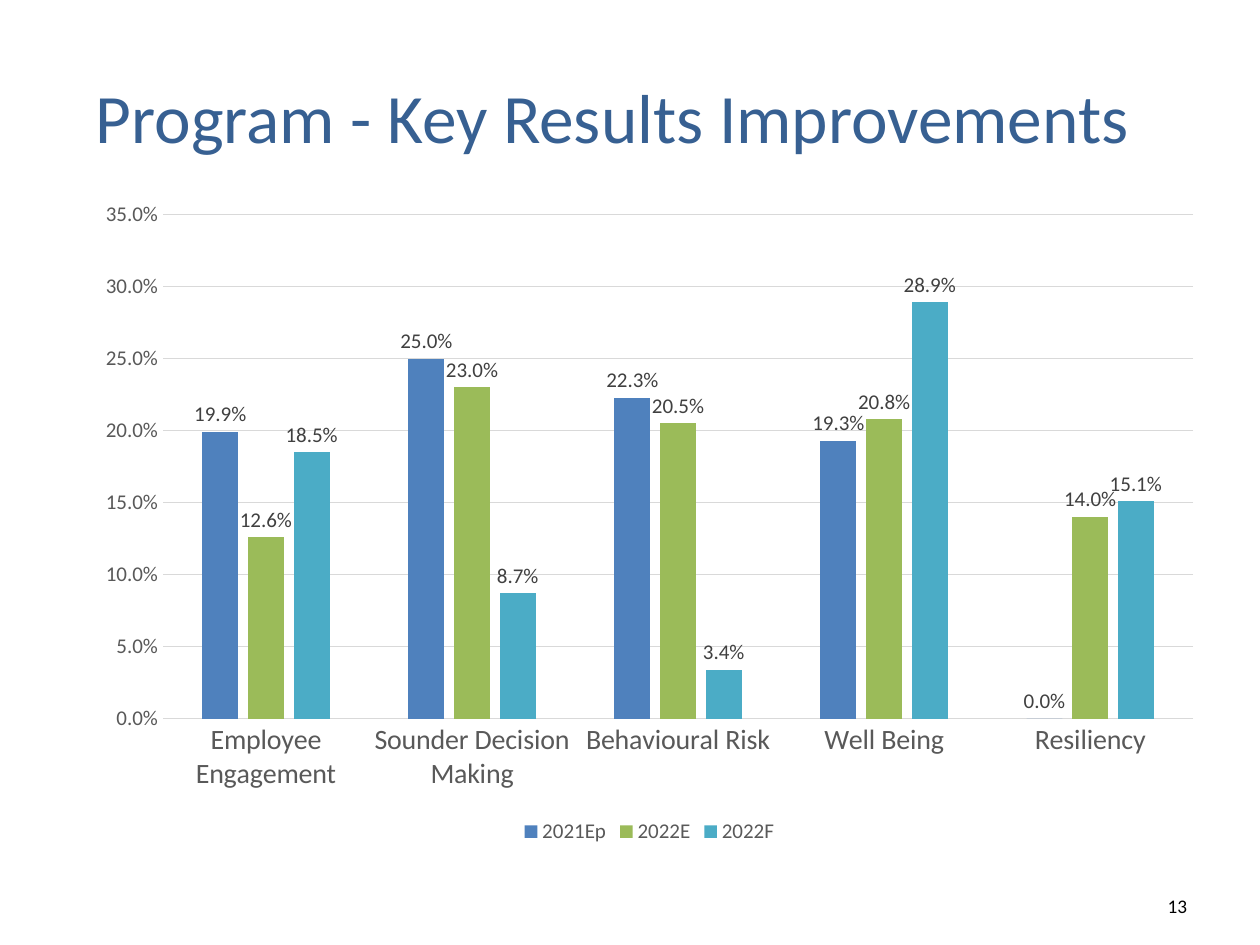
from pptx import Presentation
from pptx.chart import data as cd
from pptx.dml import color as dc
from pptx.enum import chart as ce, text as te
from pptx.util import Pt

FONT = "Calibri"
COLORS = {
    "title": "376092",
    "black": "000000",
    "axis": "595959",
    "label": "404040",
    "grid": "D9D9D9",
    "blue": "4F81BD",
    "green": "9BBB59",
    "teal": "4BACC6",
}
GROUPS = ["Employee Engagement", "Sounder Decision Making",
          "Behavioural Risk", "Well Being", "Resiliency"]
SERIES = [
    ("2021Ep", "blue", (0.199, 0.25, 0.223, 0.193, 0)),
    ("2022E", "green", (0.126, 0.23, 0.205, 0.208, 0.14)),
    ("2022F", "teal", (0.185, 0.087, 0.034, 0.289, 0.151)),
]
FORMAT = "0.0%"


def rgb(name):
    return dc.RGBColor.from_string(COLORS[name])


def style(font, size, color):
    font.name = FONT
    font.size = Pt(size)
    font.bold = False
    font.color.rgb = rgb(color)


def rule(line):
    line.color.rgb = rgb("grid")
    line.width = Pt(0.75)


def write(shape, words, size, color, anchor):
    frame = shape.text_frame
    frame.text = words
    frame.word_wrap = True
    frame.auto_size = te.MSO_AUTO_SIZE.NONE
    frame.vertical_anchor = anchor
    para = frame.paragraphs[0]
    para.alignment = te.PP_ALIGN.LEFT
    style(para.font, size, color)


def add_title(slide, words):
    title = slide.shapes.title
    title.left, title.top = Pt(47.5), Pt(43.2)
    title.width, title.height = Pt(620.6), Pt(46.1)
    write(title, words, 39.6, "title", te.MSO_ANCHOR.MIDDLE)


def add_number(slide, words):
    box = slide.shapes.add_textbox(Pt(660.2), Pt(507.6), Pt(28.1), Pt(28.8))
    write(box, words, 11, "black", te.MSO_ANCHOR.TOP)


def format_axes(chart):
    cats, vals = chart.category_axis, chart.value_axis
    for axis, size in ((cats, 16), (vals, 12)):
        axis.major_tick_mark = ce.XL_TICK_MARK.NONE
        axis.minor_tick_mark = ce.XL_TICK_MARK.NONE
        style(axis.tick_labels.font, size, "axis")
    rule(cats.format.line)
    vals.format.line.fill.background()
    vals.minimum_scale = 0
    vals.maximum_scale = 0.35
    vals.major_unit = 0.05
    vals.has_major_gridlines = True
    rule(vals.major_gridlines.format.line)
    vals.tick_labels.number_format = FORMAT
    vals.tick_labels.number_format_is_linked = False


def format_bars(plot):
    plot.gap_width = 219
    plot.overlap = -27
    plot.vary_by_categories = False
    for bars, (_, color, _) in zip(plot.series, SERIES):
        bars.format.fill.solid()
        bars.format.fill.fore_color.rgb = rgb(color)
        bars.invert_if_negative = False
        labels = bars.data_labels
        labels.show_value = True
        labels.position = ce.XL_LABEL_POSITION.OUTSIDE_END
        labels.number_format = FORMAT
        labels.number_format_is_linked = False
        style(labels.font, 12, "label")


def add_bars(slide):
    data = cd.CategoryChartData(number_format=FORMAT)
    data.categories = GROUPS
    for name, _, values in SERIES:
        data.add_series(name, values)
    chart = slide.shapes.add_chart(
        ce.XL_CHART_TYPE.COLUMN_CLUSTERED,
        Pt(47.5), Pt(108), Pt(647.3), Pt(377.3), data).chart
    style(chart.font, 12, "black")
    chart.has_title = False
    format_axes(chart)
    format_bars(chart.plots[0])
    chart.has_legend = True
    chart.legend.position = ce.XL_LEGEND_POSITION.BOTTOM
    chart.legend.include_in_layout = False
    style(chart.legend.font, 12, "axis")


def main():
    deck = Presentation()
    deck.slide_width, deck.slide_height = Pt(720), Pt(540)
    slide = deck.slides.add_slide(deck.slide_layouts[5])
    add_title(slide, "Program - Key Results Improvements")
    add_bars(slide)
    add_number(slide, "13")
    deck.save("out.pptx")


if __name__ == "__main__":
    main()
